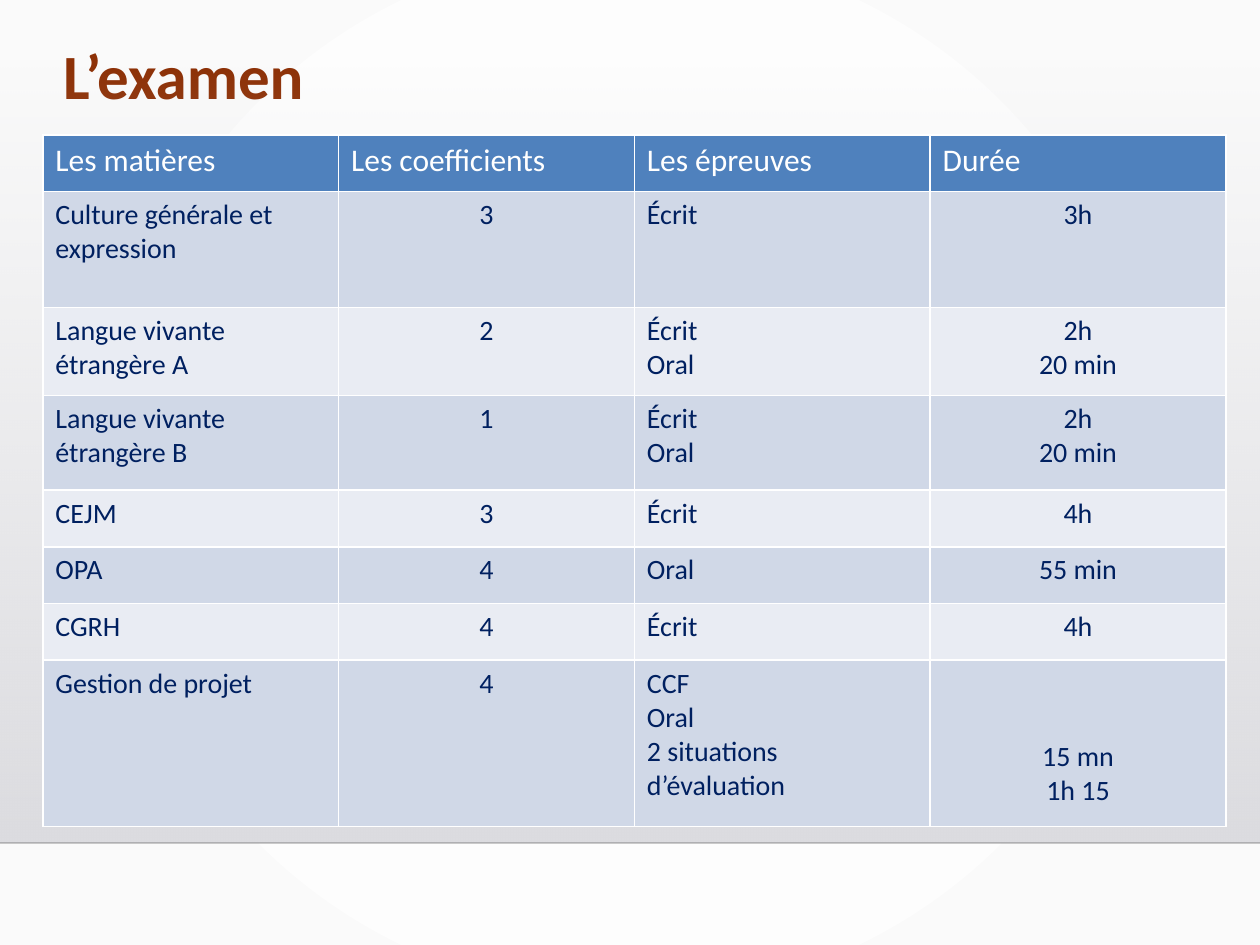
from typing import NamedTuple

from pptx import Presentation
from pptx import util as u
from pptx.dml.color import RGBColor
from pptx.enum import shapes, text
from pptx.oxml import parse_xml
from pptx.oxml.ns import nsdecls

FONT = "Calibri"
RUST = RGBColor(0x8D, 0x31, 0x07)
NAVY = RGBColor(0x00, 0x20, 0x60)
WHITE = RGBColor(0xFF, 0xFF, 0xFF)
BLUE = RGBColor(0x4F, 0x81, 0xBD)
BANDS = (RGBColor(0xD0, 0xD8, 0xE7), RGBColor(0xE9, 0xEC, 0xF3))
BLACK = RGBColor(0x00, 0x00, 0x01)
CENTRED_COLUMNS = (1, 3)


class Subject(NamedTuple):
    height: float
    name: str
    coefficient: str
    tests: str
    duration: str


HEADINGS = Subject(0.45, "Les matières", "Les coefficients", "Les épreuves", "Durée")
SUBJECTS = [
    Subject(0.92, "Culture générale et expression", "3", "Écrit", "3h"),
    Subject(0.7, "Langue vivante étrangère A", "2", "Écrit\nOral", "2h\n20 min"),
    Subject(0.75, "Langue vivante étrangère B", "1", "Écrit\nOral", "2h\n20 min"),
    Subject(0.45, "CEJM", "3", "Écrit", "4h"),
    Subject(0.45, "OPA", "4", "Oral", "55 min"),
    Subject(0.45, "CGRH", "4", "Écrit", "4h"),
    Subject(1.32, "Gestion de projet", "4", "CCF\nOral\n2 situations d’évaluation",
            "15 mn\n1h 15"),
]


def replace_with_gradient(solid_fill, start: str, end: str, direction: str,
                          start_alpha: int = 100) -> None:
    """Swap a solid fill element for a two-stop gradient."""
    gradient = parse_xml(
        f'<a:gradFill {nsdecls("a")} rotWithShape="1"><a:gsLst>'
        f'<a:gs pos="0"><a:srgbClr val="{start}">'
        f'<a:alpha val="{start_alpha * 1000}"/></a:srgbClr></a:gs>'
        f'<a:gs pos="100000"><a:srgbClr val="{end}"/></a:gs>'
        f'</a:gsLst>{direction}</a:gradFill>')
    solid_fill.getparent().replace(solid_fill, gradient)


def add_run(para, words: str, size: float, colour: RGBColor, bold: bool = False) -> None:
    span = para.add_run()
    span.text = words
    span.font.name = FONT
    span.font.size = u.Pt(size)
    span.font.bold = bold
    span.font.color.rgb = colour


def add_borders(cell) -> None:
    properties = cell._tc.get_or_add_tcPr()
    for index, side in enumerate(("lnL", "lnR", "lnT", "lnB")):
        properties.insert(index, parse_xml(
            f'<a:{side} {nsdecls("a")} w="{u.Pt(0.96)}"><a:solidFill>'
            f'<a:srgbClr val="{WHITE}"/></a:solidFill></a:{side}>'))


def fill_cell(cell, words: str, size: float, colour: RGBColor, fill: RGBColor,
              centred: bool) -> None:
    cell.fill.solid()
    cell.fill.fore_color.rgb = fill
    add_borders(cell)
    for index, line in enumerate(words.split("\n")):
        frame = cell.text_frame
        para = frame.add_paragraph() if index else frame.paragraphs[0]
        para.alignment = text.PP_ALIGN.CENTER if centred else text.PP_ALIGN.LEFT
        add_run(para, line, size, colour)


def add_backdrop(page) -> None:
    page.background.fill.solid()
    page.background.fill.fore_color.rgb = WHITE
    replace_with_gradient(
        page.element.xpath(".//p:bgPr/a:solidFill")[0], "FFFFFF", "FAFAFA",
        '<a:path path="circle"><a:fillToRect l="50000" t="50000" r="50000" b="50000"/></a:path>')

    # Grey wall fading in from the top
    wall = page.shapes.add_shape(shapes.MSO_SHAPE.RECTANGLE, 0, u.Inches(0.51),
                                 u.Inches(10), u.Inches(6.18))
    wall.shadow.inherit = False
    wall.line.fill.background()
    wall.fill.solid()
    replace_with_gradient(wall.element.spPr.xpath("./a:solidFill")[0], "DCDCE0", "DEDEE2",
                          '<a:lin ang="5400000" scaled="0"/>', start_alpha=0)

    # Floor line
    floor = page.shapes.add_connector(shapes.MSO_CONNECTOR.STRAIGHT, 0, u.Inches(6.69),
                                      u.Inches(10), u.Inches(6.69))
    floor.line.width = u.Pt(1)
    floor.line.color.rgb = BLACK
    properties = floor.element.spPr
    properties.xpath(".//a:srgbClr")[0].append(
        parse_xml(f'<a:alpha {nsdecls("a")} val="20000"/>'))
    properties.append(parse_xml(f'<a:effectLst {nsdecls("a")}/>'))


def add_title(page) -> None:
    box = page.shapes.title
    box.left, box.top = u.Inches(0.5), u.Inches(0.3)
    box.width, box.height = u.Inches(9), u.Inches(0.65)
    frame = box.text_frame
    frame.word_wrap = True
    frame.auto_size = text.MSO_AUTO_SIZE.NONE
    frame.vertical_anchor = text.MSO_ANCHOR.MIDDLE
    frame.margin_left = frame.margin_right = frame.margin_top = frame.margin_bottom = 0
    para = frame.paragraphs[0]
    para.alignment = text.PP_ALIGN.LEFT
    para.line_spacing = 0.9
    add_run(para, "L’examen", 36, RUST, bold=True)


def add_exam_table(page) -> None:
    rows = [HEADINGS, *SUBJECTS]
    total = sum(row.height for row in rows)
    table = page.shapes.add_table(len(rows), 4, u.Inches(0.34), u.Inches(1.07),
                                  u.Inches(9.39), u.Inches(total)).table
    for row_index, (height, *words) in enumerate(rows):
        table.rows[row_index].height = u.Inches(height)
        heading = row_index == 0
        for column, entry in enumerate(words):
            fill_cell(table.cell(row_index, column), entry,
                      size=18 if heading else 16,
                      colour=WHITE if heading else NAVY,
                      fill=BLUE if heading else BANDS[(row_index - 1) % 2],
                      centred=not heading and column in CENTRED_COLUMNS)
    # The project durations sit beside the lower lines of the tests
    table.cell(len(rows) - 1, 3).margin_top = u.Inches(0.63)


def main() -> None:
    deck = Presentation()
    deck.slide_width, deck.slide_height = u.Inches(10), u.Inches(7.5)
    page = deck.slides.add_slide(deck.slide_layouts[5])
    add_backdrop(page)
    add_title(page)
    add_exam_table(page)
    deck.save("out.pptx")


if __name__ == "__main__":
    main()
